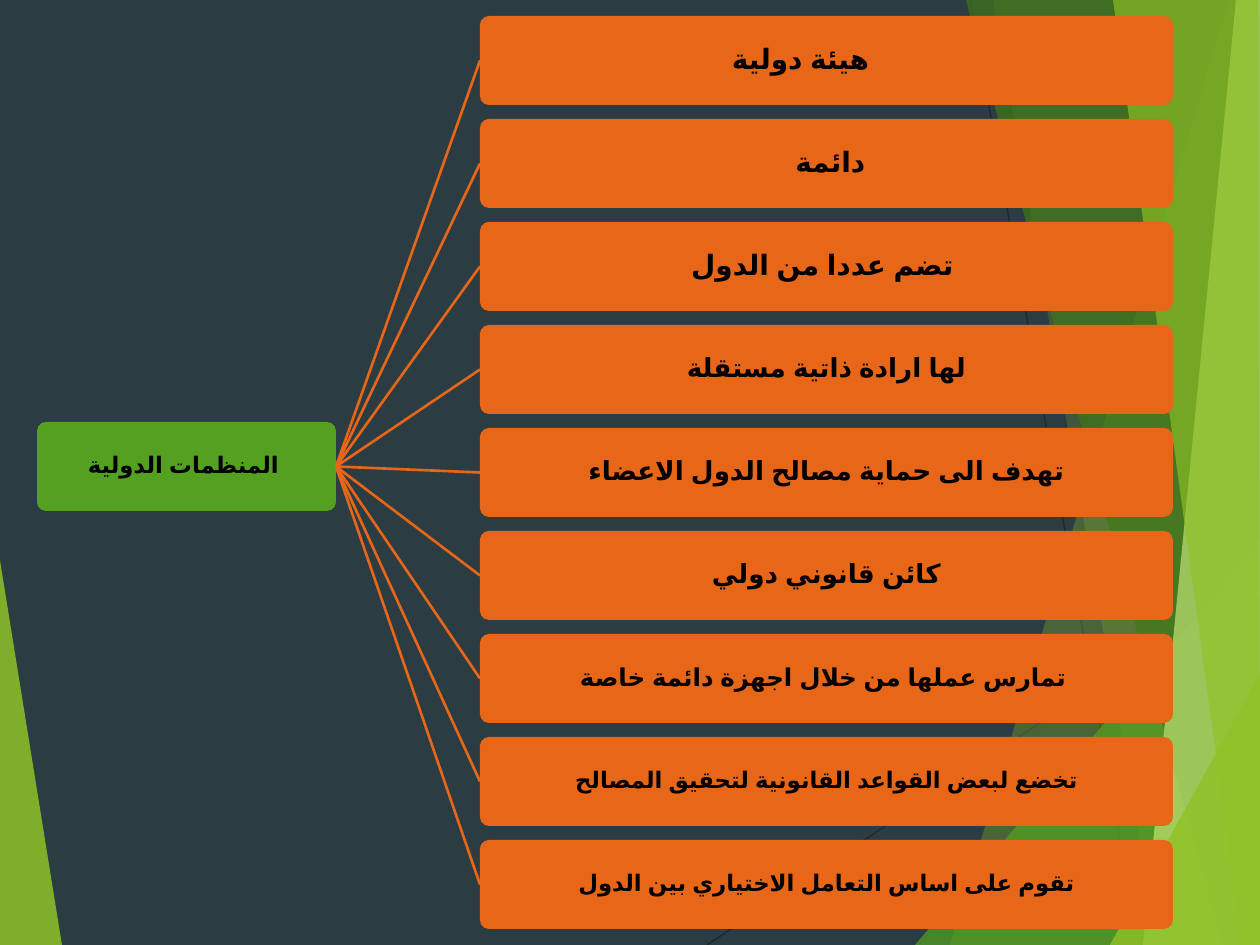
from lxml import etree
from pptx import Presentation
from pptx import util as u
from pptx.dml.color import RGBColor
from pptx.enum import lang, shapes, text
from pptx.oxml import ns

PX = 914400 / 126
WIDE, HIGH = 1260, 945
NIGHT = RGBColor(0x2C, 0x3C, 0x43)
LIME = RGBColor(0x90, 0xC2, 0x26)
GREEN = RGBColor(0x54, 0xA0, 0x21)
MOSS = RGBColor(0x3F, 0x78, 0x19)
PALE = RGBColor(0xC0, 0xE4, 0x74)
ORANGE = RGBColor(0xE7, 0x66, 0x18)
BLACK = RGBColor(0, 0, 0)
GREY = RGBColor(0x26, 0x26, 0x26)

RAYS = [((707, 945), (1260, 576)), ((970, 0), (1139, 945))]
SHARDS = [
    (LIME, 85, [(0, 560), (62, 945), (0, 945)]),
    (LIME, 30, [(1229, 0), (950, 945), (1260, 945), (1260, 0)]),
    (LIME, 20, [(993, 0), (1158, 945), (1260, 945), (1260, 0)]),
    (GREEN, 72, [(915, 945), (1260, 541), (1260, 945)]),
    (MOSS, 70, [(966, 0), (1222, 945), (1260, 945), (1260, 0)]),
    (PALE, 70, [(1236, 0), (1143, 945), (1260, 945), (1260, 0)]),
    (LIME, 65, [(1113, 0), (1242, 945), (1260, 945), (1258, 0)]),
    (LIME, 80, [(1110, 945), (1260, 674), (1260, 945)]),
]
ROOT = "المنظمات الدولية "
TRAITS = [
    ("هيئة دولية\t", 16, False),
    ("دائمة ", 16, True),
    ("تضم عددا من الدول ", 16, False),
    ("لها ارادة ذاتية مستقلة", 15, False),
    ("تهدف الى حماية مصالح الدول الاعضاء", 15, False),
    ("كائن قانوني دولي", 15, False),
    (" تمارس عملها من خلال اجهزة دائمة خاصة", 14, True),
    ("تخضع لبعض القواعد القانونية لتحقيق المصالح", 13, False),
    ("تقوم على اساس التعامل الاختياري بين الدول", 13, False),
]


def emu(px):
    """Turn px into EMU."""
    return u.Emu(round(px * PX))


def write(shape, words, size=13, rtl=False, font="Cabin", color=BLACK):
    """Put one centred bold line of text into a shape."""
    frame = shape.text_frame
    frame.word_wrap = True
    frame.vertical_anchor = text.MSO_ANCHOR.MIDDLE
    frame.margin_left = frame.margin_right = emu(4)
    frame.margin_top = frame.margin_bottom = emu(4)
    para = frame.paragraphs[0]
    para.alignment = text.PP_ALIGN.CENTER
    para.line_spacing = 0.9
    if rtl:
        para._p.get_or_add_pPr().set("rtl", "1")
    run = para.add_run()
    run.text = words
    run.font.size = u.Pt(size)
    run.font.bold = True
    run.font.name = font
    run.font.language_id = lang.MSO_LANGUAGE_ID.ARABIC
    run.font.color.rgb = color
    etree.SubElement(run._r.get_or_add_rPr(), ns.qn("a:cs"), typeface="+mn-cs")


def paint(shape, color, alpha=100):
    """Give a shape a plain fill without line or shadow."""
    shape.shadow.inherit = False
    shape.fill.solid()
    shape.fill.fore_color.rgb = color
    shape.line.fill.background()
    if alpha < 100:
        tint = shape.fill._xPr.find(".//" + ns.qn("a:srgbClr"))
        etree.SubElement(tint, ns.qn("a:alpha"), val=str(alpha * 1000))


def link(slide, start, end, color, width):
    """Draw a straight line between two points."""
    line = slide.shapes.add_connector(
        shapes.MSO_CONNECTOR.STRAIGHT, *map(emu, start + end))
    line.line.color.rgb = color
    line.line.width = u.Pt(width)
    etree.SubElement(line._element.spPr, ns.qn("a:effectLst"))
    return line


def card(slide, box, color, words, **form):
    """Draw a rounded box with its text."""
    shape = slide.shapes.add_shape(
        shapes.MSO_SHAPE.ROUNDED_RECTANGLE, *map(emu, box))
    shape.adjustments[0] = 0.1
    paint(shape, color)
    write(shape, words, **form)
    return shape


def facets(slide, left, top):
    """Draw the thin rays and the see-through shards behind the tree."""
    for start, end in RAYS:
        link(slide, (left + start[0], top + start[1]),
             (left + end[0], top + end[1]), GREY, 0.75)
    for color, alpha, points in SHARDS:
        first, *rest = [(left + x, top + y) for x, y in points]
        pen = slide.shapes.build_freeform(*first, scale=PX)
        pen.add_line_segments(rest, close=True)
        paint(pen.convert_to_shape(), color, alpha)


def tree(slide, left, top, width, height):
    """Draw the root card and a column of trait cards joined to it."""
    tall, stem, start, drop = 89, 299, 443, 406
    step = (height - tall) // (len(TRAITS) - 1)
    root = card(slide, (left, top + drop, stem, tall), GREEN, ROOT)
    for i, (words, size, rtl) in enumerate(TRAITS):
        box = (left + start, top + i * step, width - start, tall)
        leaf = card(slide, box, ORANGE, words, size=size, rtl=rtl)
        line = link(slide, (left + stem, top), box[:2], ORANGE, 1.5)
        line.begin_connect(root, 3)
        line.end_connect(leaf, 1)


def main():
    """Build and save the slide."""
    deck = Presentation()
    deck.slide_width, deck.slide_height = emu(WIDE), emu(HIGH)
    slide = deck.slides.add_slide(deck.slide_layouts[6])
    slide.background.fill.solid()
    slide.background.fill.fore_color.rgb = NIGHT
    facets(slide, 0, 0)
    tree(slide, 37, 16, 1136, 913)
    deck.save("out.pptx")


if __name__ == "__main__":
    main()
